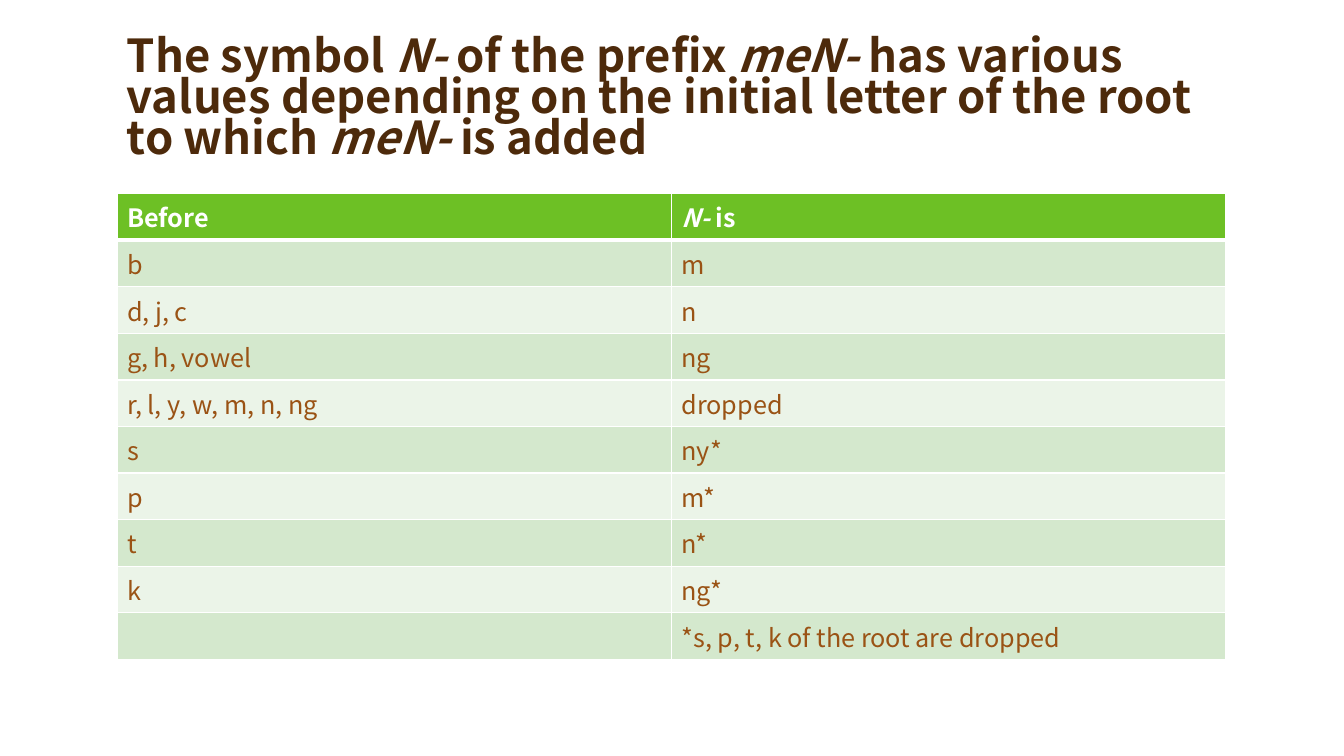
from lxml.etree import SubElement
from pptx import Presentation
from pptx.dml.color import RGBColor
from pptx.enum.text import MSO_ANCHOR, MSO_AUTO_SIZE
from pptx.oxml.ns import qn
from pptx.util import Inches, Pt

FONT = "Noto Sans CJK TC"
LEFT, WIDTH = 1.16, 11
TITLE_TOP, TITLE_HEIGHT = 0.33, 1.33
TABLE_TOP, ROW_HEIGHT = 1.92, 0.406
WHITE, GREEN, BANDS = "FFFFFF", "6DC025", ("D4E8CD", "EBF4E8")
TITLE_FORMAT = {"size": Pt(32.4), "bold": True, "color": "4D2A0B"}
HEAD_FORMAT = {"size": Pt(18), "bold": True, "color": WHITE}
BODY_FORMAT = {"size": Pt(18), "bold": False, "color": "9A5315"}

TITLE = [
    ("The symbol ", False),
    ("N- ", True),
    ("of the prefix ", False),
    ("meN-", True),
    (" has various values depending on the initial letter of the root to which ", False),
    ("meN-", True),
    (" is added", False),
]
HEADER = [[("Before", False)], [("N-", True), (" is", False)]]
RULES = [
    ("b", "m"),
    ("d, j, c", "n"),
    ("g, h, vowel", "ng"),
    ("r, l, y, w, m, n, ng", "dropped"),
    ("s", "ny*"),
    ("p", "m*"),
    ("t", "n*"),
    ("k", "ng*"),
    ("", "*s, p, t, k of the root are dropped"),
]


def rgb(value):
    return RGBColor.from_string(value)


def set_font(font, fmt):
    for name, value in {"name": FONT, **fmt}.items():
        if name == "color":
            font.color.rgb = rgb(value)
        else:
            setattr(font, name, value)


def write_runs(p, runs, fmt):
    set_font(p.font, fmt)
    for text, italic in runs:
        r = p.add_run()
        r.text = text
        set_font(r.font, {**fmt, "italic": italic})


def add_title(s):
    tb = s.shapes.add_textbox(
        Inches(LEFT), Inches(TITLE_TOP), Inches(WIDTH), Inches(TITLE_HEIGHT))
    tf = tb.text_frame
    settings = {"word_wrap": True, "auto_size": MSO_AUTO_SIZE.NONE,
                "vertical_anchor": MSO_ANCHOR.BOTTOM}
    for name, value in settings.items():
        setattr(tf, name, value)
    p = tf.paragraphs[0]
    p.line_spacing = 0.75
    write_runs(p, TITLE, TITLE_FORMAT)


def set_borders(cell, top, bottom):
    tcPr = cell._tc.get_or_add_tcPr()
    for tag, width in {"a:lnL": 1, "a:lnR": 1, "a:lnT": top, "a:lnB": bottom}.items():
        ln = SubElement(tcPr, qn(tag), w=str(Pt(width)))
        fill = SubElement(ln, qn("a:solidFill"))
        SubElement(fill, qn("a:srgbClr"), val=WHITE)


def fill_cell(cell, runs, fmt, color, top, bottom):
    set_borders(cell, top, bottom)
    cell.fill.solid()
    cell.fill.fore_color.rgb = rgb(color)
    write_runs(cell.text_frame.paragraphs[0], runs, fmt)


def add_rules_table(s):
    rows = len(RULES) + 1
    table = s.shapes.add_table(
        rows, 2, Inches(LEFT), Inches(TABLE_TOP),
        Inches(WIDTH), Inches(ROW_HEIGHT * rows)).table
    for col, runs in enumerate(HEADER):
        fill_cell(table.cell(0, col), runs, HEAD_FORMAT, GREEN, 1, 3)
    for row, texts in enumerate(RULES, 1):
        for col, text in enumerate(texts):
            runs = [(text, False)] if text else []
            fill_cell(table.cell(row, col), runs, BODY_FORMAT,
                      BANDS[(row - 1) % 2], 3 if row == 1 else 1, 1)


def main():
    prs = Presentation()
    prs.slide_width, prs.slide_height = Inches(13.33), Inches(7.5)
    s = prs.slides.add_slide(prs.slide_layouts[6])
    add_title(s)
    add_rules_table(s)
    prs.save("out.pptx")


if __name__ == "__main__":
    main()
